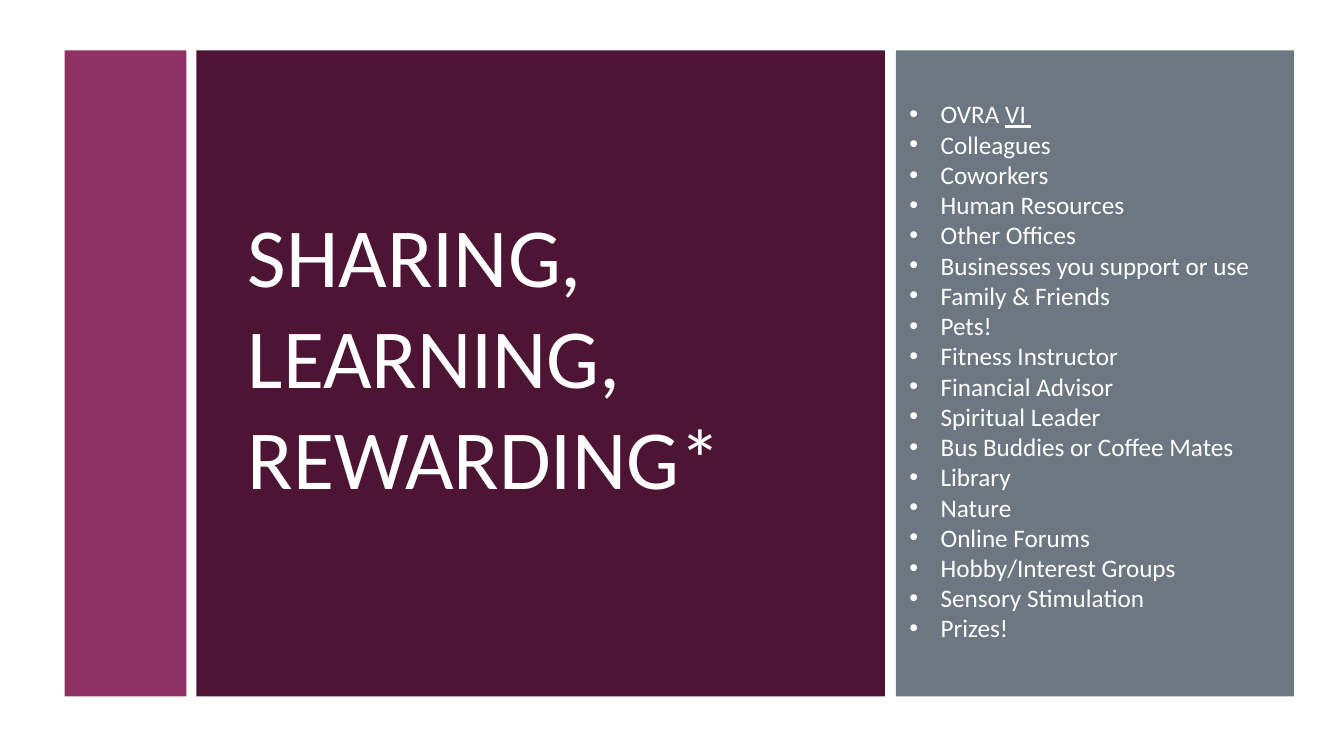
import pptx
import pptx.dml.color
import pptx.enum.shapes
import pptx.enum.text
import pptx.util

Cm = pptx.util.Cm
COLOURS = {"plum": "4D1434", "berry": "903163", "slate": "6C7781", "white": "FFFFFF"}
FONT = "Calibri"
TOP, HEIGHT = 1.27, 16.28
LINE_SPACING = 1.0
SUPPORTERS = [
    "Colleagues",
    "Coworkers",
    "Human Resources",
    "Other Offices",
    "Businesses you support or use",
    "Family & Friends",
    "Pets!",
    "Fitness Instructor",
    "Financial Advisor",
    "Spiritual Leader",
    "Bus Buddies or Coffee Mates",
    "Library",
    "Nature",
    "Online Forums",
    "Hobby/Interest Groups",
    "Sensory Stimulation",
    "Prizes!",
]


def colour(name):
    return pptx.dml.color.RGBColor.from_string(COLOURS[name])


def add_panel(slide, left, top, width, height, fill):
    panel = slide.shapes.add_shape(
        pptx.enum.shapes.MSO_SHAPE.RECTANGLE, Cm(left), Cm(top), Cm(width), Cm(height))
    panel.shadow.inherit = False
    panel.fill.solid()
    panel.fill.fore_color.rgb = colour(fill)
    panel.line.fill.background()
    slide.shapes.element.insert(2, panel.element)


def place_text(placeholder, left, top, width, height, anchor):
    placeholder.left, placeholder.top = Cm(left), Cm(top)
    placeholder.width, placeholder.height = Cm(width), Cm(height)
    frame = placeholder.text_frame
    frame.word_wrap = True
    frame.auto_size = pptx.enum.text.MSO_AUTO_SIZE.NONE
    frame.vertical_anchor = anchor
    return frame


def format_paragraph(paragraph, size):
    paragraph.alignment = pptx.enum.text.PP_ALIGN.LEFT
    paragraph.line_spacing = LINE_SPACING
    paragraph.space_before = pptx.util.Pt(0)
    paragraph.font.name = FONT
    paragraph.font.size = pptx.util.Pt(size)
    paragraph.font.color.rgb = colour("white")


def add_heading(slide, left, top, width, height):
    add_panel(slide, left, top, width, height, "plum")
    heading = place_text(slide.shapes.title, left + 1.04, top + 1.09, width - 2.01,
                         height - 3.1, pptx.enum.text.MSO_ANCHOR.MIDDLE)
    heading.text = "SHARING, LEARNING,\vREWARDING*"
    format_paragraph(heading.paragraphs[0], 60)


def add_supporters(slide, left, top, width, height):
    add_panel(slide, left, top, width, height, "slate")
    supporters = place_text(slide.placeholders[1], left + 0.08, top + 1.09, width - 0.43,
                            height - 2, pptx.enum.text.MSO_ANCHOR.TOP)
    association = supporters.paragraphs[0]
    association.add_run().text = "OVRA "
    chapter = association.add_run()
    chapter.text = "VI "
    chapter.font.underline = True
    for supporter in SUPPORTERS:
        supporters.add_paragraph().text = supporter
    for paragraph in supporters.paragraphs:
        format_paragraph(paragraph, 18)
        properties = paragraph._p.get_or_add_pPr()
        properties.set("marL", str(Cm(0.79)))
        properties.set("indent", str(Cm(-0.79)))


def main():
    presentation = pptx.Presentation()
    presentation.slide_width = Cm(33.87)
    presentation.slide_height = Cm(19.05)
    slide = presentation.slides.add_slide(presentation.slide_layouts[1])
    add_panel(slide, 1.63, TOP, 3.07, HEIGHT, "berry")
    add_heading(slide, 4.95, TOP, 17.35, HEIGHT)
    add_supporters(slide, 22.58, TOP, 10.03, HEIGHT)
    presentation.save("out.pptx")


if __name__ == "__main__":
    main()
